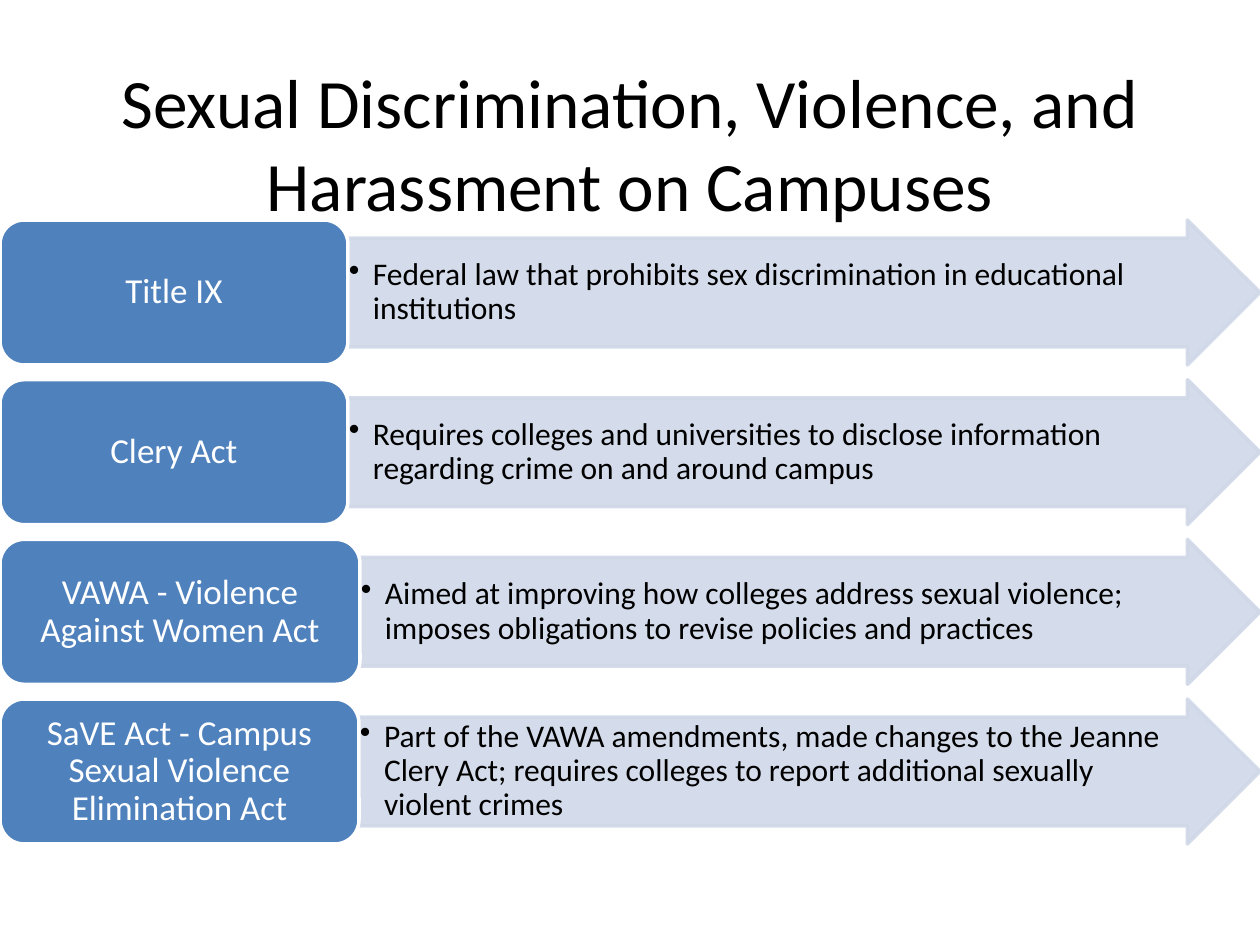
from dataclasses import dataclass

from lxml import etree
from pptx import Presentation
from pptx import util as u
from pptx.dml.color import RGBColor
from pptx.enum import shapes, text
from pptx.oxml.ns import qn

SCALE = 914400 / 126  # EMU per px


@dataclass(frozen=True)
class Theme:
    font: str = "Calibri"
    ink: str = "000000"
    paper: str = "FFFFFF"
    label: str = "4F81BD"
    arrow: str = "D0D8E8"
    arrow_opacity: int = 90
    title_size: float = 39.6
    label_size: float = 20
    body_size: float = 18
    outline: float = 2


THEME = Theme()

TITLE = "Sexual Discrimination, Violence, and Harassment on Campuses"
# label, label width in px, description
ACTS = [
    ("Title IX", 348,
     "Federal law that prohibits sex discrimination in educational institutions"),
    ("Clery Act", 348,
     "Requires colleges and universities to disclose information regarding "
     "crime on and around campus"),
    ("VAWA - Violence Against Women Act", 360,
     "Aimed at improving how colleges address sexual violence; imposes "
     "obligations to revise policies and practices"),
    ("SaVE Act - Campus Sexual Violence Elimination Act", 359,
     "Part of the VAWA amendments, made changes to the Jeanne Clery Act; "
     "requires colleges to report additional sexually violent crimes"),
]


def px(length):
    return u.Emu(round(length * SCALE))


def write(shape, words, *, size, color, align=text.PP_ALIGN.CENTER,
          insets=(10, 5, 10, 5), spacing=None, bullet_indent=None):
    """Fill the shape with one paragraph; insets are left, top, right, bottom."""
    frame = shape.text_frame
    frame.word_wrap = True
    frame.auto_size = text.MSO_AUTO_SIZE.NONE
    frame.vertical_anchor = text.MSO_ANCHOR.MIDDLE
    (frame.margin_left, frame.margin_top,
     frame.margin_right, frame.margin_bottom) = map(px, insets)
    para = frame.paragraphs[0]
    para.alignment = align
    if spacing:
        para.line_spacing = spacing
    if bullet_indent:
        props = para._p.get_or_add_pPr()
        props.set("marL", str(px(bullet_indent)))
        props.set("indent", str(-px(bullet_indent)))
        etree.SubElement(props, qn("a:buChar"), char="•")
    span = para.add_run()
    span.text = words
    span.font.name = THEME.font
    span.font.size = u.Pt(size)
    span.font.color.rgb = RGBColor.from_string(color)


def add_block(page, kind, box, fill, line, opacity=100):
    shape = page.shapes.add_shape(kind, *map(px, box))
    shape.shadow.inherit = False
    shape.line.width = u.Pt(THEME.outline)
    for paint, color in ((shape.fill, fill), (shape.line.fill, line)):
        paint.solid()
        paint.fore_color.rgb = RGBColor.from_string(color)
    if opacity < 100:
        for color in shape._element.spPr.iter(qn("a:srgbClr")):
            etree.SubElement(color, qn("a:alpha"), val=str(opacity * 1000))
    return shape


def add_title(page, box):
    title = page.shapes.title
    title.left, title.top, title.width, title.height = map(px, box)
    write(title, TITLE, size=THEME.title_size, color=THEME.ink,
          insets=(13, 6, 13, 6))


def add_act(page, box, name, label_width, description):
    left, top, width, height = box
    arrow = add_block(page, shapes.MSO_SHAPE.RIGHT_ARROW,
                      (left + label_width, top, width - label_width, height),
                      THEME.arrow, THEME.arrow, THEME.arrow_opacity)
    arrow.adjustments[0], arrow.adjustments[1] = 0.75, 0.5
    write(arrow, description, size=THEME.body_size, color=THEME.ink,
          align=text.PP_ALIGN.LEFT, insets=(1, 1, 37, 1), spacing=0.9,
          bullet_indent=24)
    label = add_block(page, shapes.MSO_SHAPE.ROUNDED_RECTANGLE,
                      (left, top, label_width, height),
                      THEME.label, THEME.paper)
    write(label, name, size=THEME.label_size, color=THEME.paper, spacing=0.9)


def add_acts(page, box, row_height):
    """Spread the rows evenly over the box."""
    left, top, width, height = box
    step = (height - row_height) / (len(ACTS) - 1)
    for row, act in enumerate(ACTS):
        add_act(page, (left, top + row * step, width, row_height), *act)


def main():
    deck = Presentation()
    deck.slide_width, deck.slide_height = px(1260), px(945)
    page = deck.slides.add_slide(deck.slide_layouts.get_by_name("Title Only"))
    add_title(page, (63, 63, 1134, 158))
    add_acts(page, (0, 220, 1260, 624), row_height=145)
    deck.save("out.pptx")


if __name__ == "__main__":
    main()
